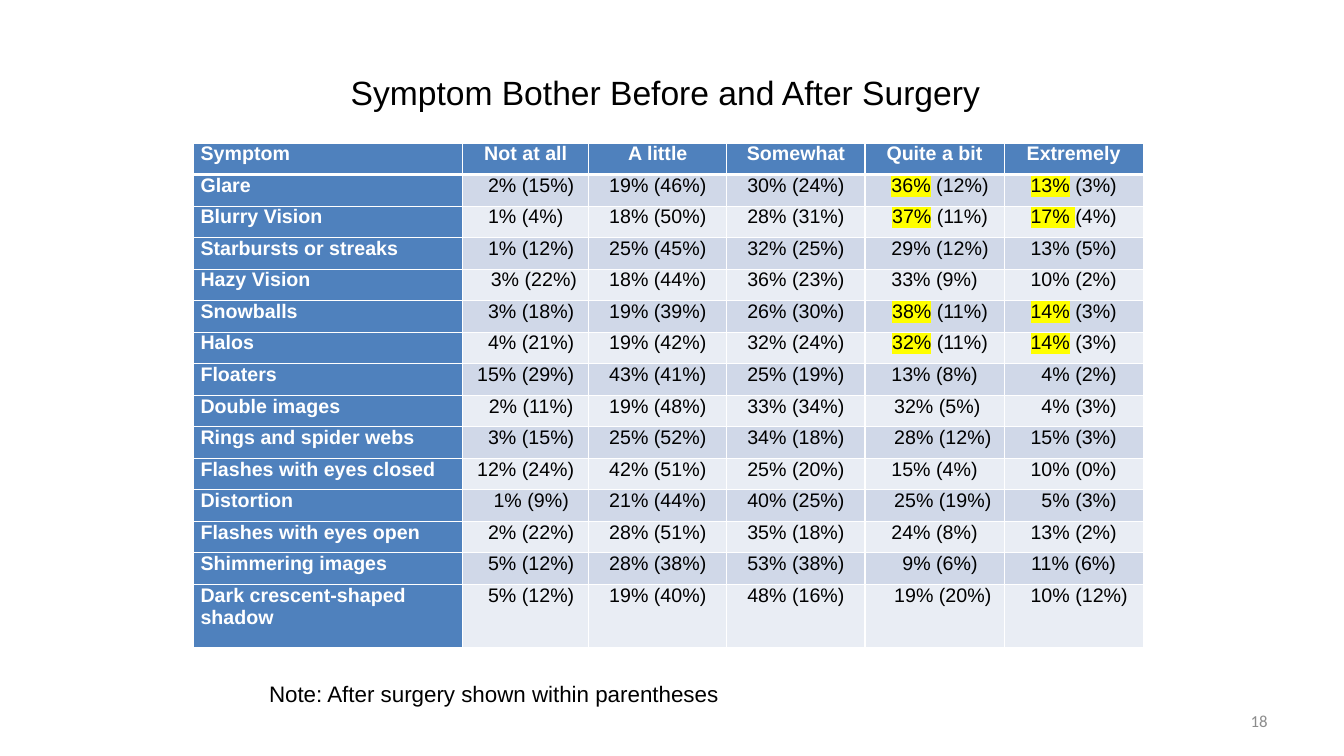
from dataclasses import dataclass

from lxml import etree
from pptx import Presentation, util as u
from pptx.dml.color import RGBColor
from pptx.enum import text as t
from pptx.oxml import ns


@dataclass(frozen=True)
class Theme:
    """Colours, fonts and type sizes of the slide."""
    font: str = "Arial"
    alt: str = "Calibri"
    head: str = "4F81BD"
    bands: tuple = ("E9EDF4", "D0D8E8")
    white: str = "FFFFFF"
    black: str = "000000"
    grey: str = "8C8C8C"
    mark: str = "FFFF00"
    title: int = 24
    note: int = 16
    body: int = 14
    small: int = 12
    space: float = 0.28


LOOK = Theme()
WIDE, HIGH = u.Inches(13.33), u.Inches(7.5)
COLS = (20.03, 9.38, 10.28, 10.28, 10.35, 10.35)
ROW = 4.17
LAST = 8.4
HEADS = ("Symptom", "Not at all", "A little", "Somewhat", "Quite a bit", "Extremely")

# Each ">" indents a value by one space width; text before "|" is highlighted.
DATA = (
    ("Glare", ">>2% (15%)", "19% (46%)", "30% (24%)", ">>36%| (12%)", "13%| (3%)"),
    ("Blurry Vision", "1% (4%)", "18% (50%)", "28% (31%)", ">>37%| (11%)", "17% |(4%)"),
    ("Starbursts or streaks", ">>1% (12%)", "25% (45%)", "32% (25%)", ">>29% (12%)", "13% (5%)"),
    ("Hazy Vision", ">>>3% (22%)", "18% (44%)", "36% (23%)", "33% (9%)", "10% (2%)"),
    ("Snowballs", ">>3% (18%)", "19% (39%)", "26% (30%)", ">>38%| (11%)", "14%| (3%)"),
    ("Halos", ">>4% (21%)", "19% (42%)", "32% (24%)", ">>32%| (11%)", "14%| (3%)"),
    ("Floaters", "15% (29%)", "43% (41%)", "25% (19%)", "13% (8%)", ">>4% (2%)"),
    ("Double images", ">>2% (11%)", "19% (48%)", "33% (34%)", ">32% (5%)", ">>4% (3%)"),
    ("Rings and spider webs", ">>3% (15%)", "25% (52%)", "34% (18%)", ">>>28% (12%)", "15% (3%)"),
    ("Flashes with eyes closed", "12% (24%)", "42% (51%)", "25% (20%)", "15% (4%)", "10% (0%)"),
    ("Distortion", ">>1% (9%)", "21% (44%)", "40% (25%)", ">>>25% (19%)", ">>5% (3%)"),
    ("Flashes with eyes open", ">>2% (22%)", "28% (51%)", "35% (18%)", "24% (8%)", "13% (2%)"),
    ("Shimmering images", ">>5% (12%)", "28% (38%)", "53% (38%)", ">>9% (6%)", "11% (6%)"),
    ("Dark crescent-shaped shadow", ">>5% (12%)", "19% (40%)", "48% (16%)", ">>>19% (20%)", ">>10% (12%)"),
)


def across(share):
    """Turn a percentage of the slide width into a length."""
    return u.Emu(round(WIDE * share / 100))


def down(share):
    """Turn a percentage of the slide height into a length."""
    return u.Emu(round(HIGH * share / 100))


def area(x, y, w, h):
    """Turn four percentages into left, top, width and height."""
    return across(x), down(y), across(w), down(h)


def add_run(para, words, size, ink, face=LOOK.font, bold=False, mark=None):
    """Add one formatted run, highlighted if a mark colour is given."""
    run = para.add_run()
    run.text = words
    font = run.font
    font.size, font.name, font.bold = u.Pt(size), face, bold
    font.color.rgb = RGBColor.from_string(ink)
    if mark:
        light = etree.Element(ns.qn("a:highlight"))
        etree.SubElement(light, ns.qn("a:srgbClr"), val=mark)
        run._r.rPr.find(ns.qn("a:solidFill")).addnext(light)


def set_text(shape, words, align, size, ink, face=LOOK.font):
    """Fill a shape with one line of text."""
    frame = shape.text_frame
    frame.word_wrap = True
    frame.auto_size = t.MSO_AUTO_SIZE.NONE
    frame.vertical_anchor = t.MSO_ANCHOR.MIDDLE
    para = frame.paragraphs[0]
    para.alignment = align
    add_run(para, words, size, ink, face)


def add_label(slide, place, *style):
    """Add a text box in the given style."""
    set_text(slide.shapes.add_textbox(*place), *style)


def set_edges(cell, row):
    """Draw white borders, thick below the header row."""
    props = cell._tc.get_or_add_tcPr()
    thick = {"T": row == 1, "B": row == 0}
    for spot, side in enumerate("LRTB"):
        width = u.Pt(3 if thick.get(side) else 1)
        line = etree.Element(ns.qn(f"a:ln{side}"), w=str(width))
        fill = etree.SubElement(line, ns.qn("a:solidFill"))
        etree.SubElement(fill, ns.qn("a:srgbClr"), val=LOOK.white)
        props.insert(spot, line)


def set_cell(cell, row, col, words):
    """Format one table cell and write its runs."""
    head = row == 0 or col == 0
    cell.margin_left = cell.margin_right = u.Inches(0.07)
    cell.margin_top = cell.margin_bottom = 0
    cell.fill.solid()
    shade = LOOK.head if head else LOOK.bands[row % 2]
    cell.fill.fore_color.rgb = RGBColor.from_string(shade)
    set_edges(cell, row)
    para = cell.text_frame.paragraphs[0]
    para.alignment = t.PP_ALIGN.CENTER if col else t.PP_ALIGN.LEFT
    value = words.lstrip(">")
    shift = (len(words) - len(value)) * LOOK.space * LOOK.body
    if shift:
        para._p.get_or_add_pPr().set("marL", str(u.Pt(shift)))
    lit, bar, rest = value.rpartition("|")
    ink = LOOK.white if head else LOOK.black
    if bar:
        add_run(para, lit, LOOK.body, ink, mark=LOOK.mark)
    add_run(para, rest, LOOK.body, ink, bold=head)


def add_grid(slide):
    """Add the symptom table."""
    rows = (HEADS, *DATA)
    tall = [ROW] * len(DATA) + [LAST]
    place = area(14.4, 18.93, sum(COLS), sum(tall))
    table = slide.shapes.add_table(len(rows), len(COLS), *place).table
    table.horz_banding = False
    for col, share in zip(table.columns, COLS):
        col.width = across(share)
    for row, share in zip(table.rows, tall):
        row.height = down(share)
    for i, row in enumerate(rows):
        for j, words in enumerate(row):
            set_cell(table.cell(i, j), i, j, words)


def add_title(slide, place, words):
    """Move the title placeholder and fill it."""
    title = slide.shapes.title
    title.left, title.top, title.width, title.height = place
    set_text(title, words, t.PP_ALIGN.CENTER, LOOK.title, LOOK.black)


def main():
    """Build and save the slide."""
    deck = Presentation()
    deck.slide_width, deck.slide_height = WIDE, HIGH
    slide = deck.slides.add_slide(deck.slide_layouts[5])
    add_label(slide, area(71.72, 92.67, 23.33, 5.33), "18",
              t.PP_ALIGN.RIGHT, LOOK.small, LOOK.grey, LOOK.alt)
    add_grid(slide)
    add_title(slide, area(13.95, 8.8, 71.12, 6.67),
              "Symptom Bother Before and After Surgery")
    add_label(slide, area(19.28, 89.33, 60.77, 4.93),
              "Note: After surgery shown within parentheses",
              t.PP_ALIGN.LEFT, LOOK.note, LOOK.black)
    deck.save("out.pptx")


if __name__ == "__main__":
    main()
